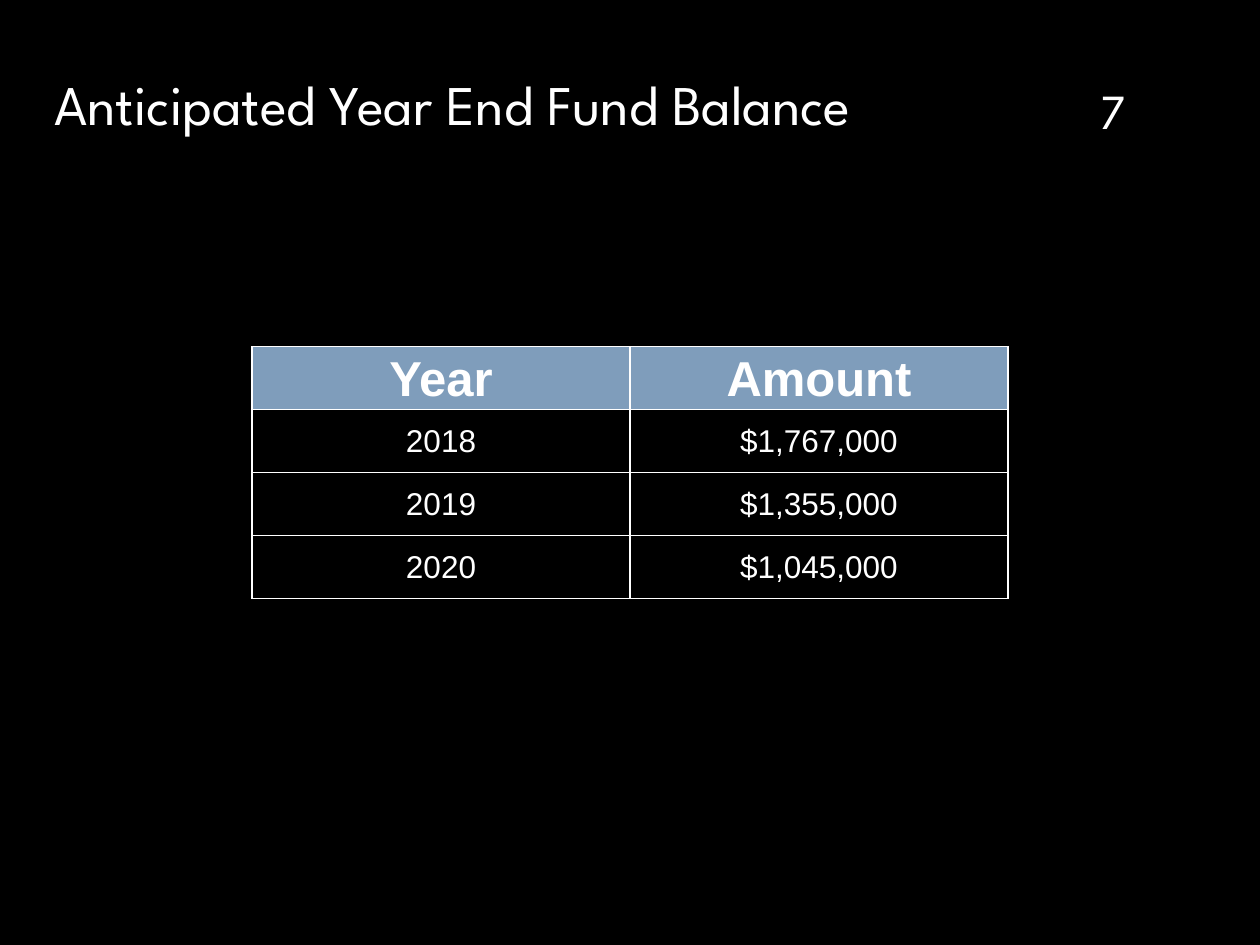
from dataclasses import dataclass

from lxml.etree import SubElement
from pptx import Presentation
from pptx.dml.color import RGBColor
from pptx.enum.text import MSO_ANCHOR, MSO_AUTO_SIZE, PP_ALIGN
from pptx.oxml.ns import qn
from pptx.util import Cm, Pt

TITLE = "Anticipated Year End Fund Balance"
PAGE_NUMBER = "7"
BALANCES = [
    ("Year", "Amount"),
    ("2018", "$1,767,000"),
    ("2019", "$1,355,000"),
    ("2020", "$1,045,000"),
]


@dataclass(frozen=True)
class Theme:
    background: str = "000000"
    text: str = "FFFFFF"
    header: str = "7F9DBB"
    heading_font: str = "League Spartan"
    table_font: str = "Arial"
    title_size: int = 32
    number_size: int = 28
    header_size: int = 28
    body_size: int = 18
    border_width: int = 1


THEME = Theme()
SLIDE_WIDTH, SLIDE_HEIGHT = Cm(25.4), Cm(19.05)
COLUMN_WIDTH, ROW_HEIGHT = Cm(7.62), Cm(1.27)
TABLE_TOP = Cm(6.99)
CELL_INSET = Cm(0.03)


def write_text(text_frame, text, font_name, size, alignment, bold=False):
    paragraph = text_frame.paragraphs[0]
    paragraph.alignment = alignment
    run = paragraph.add_run()
    run.text = text
    run.font.name = font_name
    run.font.size = Pt(size)
    run.font.bold = bold
    run.font.color.rgb = RGBColor.from_string(THEME.text)


def place(shape, left, top, width, height):
    shape.left, shape.top, shape.width, shape.height = left, top, width, height


def add_borders(cell):
    properties = cell._tc.get_or_add_tcPr()
    for position, side in enumerate(("lnL", "lnR", "lnT", "lnB")):
        line = SubElement(properties, qn(f"a:{side}"), w=str(Pt(THEME.border_width)))
        fill = SubElement(line, qn("a:solidFill"))
        SubElement(fill, qn("a:srgbClr"), val=THEME.text)
        properties.insert(position, line)


def add_title(slide):
    title = slide.shapes.title
    place(title, Cm(0.84), Cm(1.27), Cm(21.51), Cm(3.89))
    text_frame = title.text_frame
    text_frame.word_wrap = True
    text_frame.auto_size = MSO_AUTO_SIZE.NONE
    text_frame.vertical_anchor = MSO_ANCHOR.TOP
    write_text(text_frame, TITLE, THEME.heading_font, THEME.title_size, PP_ALIGN.LEFT)


def add_page_number(slide):
    number = slide.shapes.add_textbox(Cm(21.56), Cm(0.81), Cm(1.75), Cm(2.13))
    text_frame = number.text_frame
    text_frame.word_wrap = True
    text_frame.vertical_anchor = MSO_ANCHOR.BOTTOM
    write_text(text_frame, PAGE_NUMBER, THEME.heading_font, THEME.number_size, PP_ALIGN.CENTER)


def add_balance_table(slide):
    row_count, column_count = len(BALANCES), len(BALANCES[0])
    width = COLUMN_WIDTH * column_count
    left = (SLIDE_WIDTH - width) // 2
    table = slide.shapes.add_table(
        row_count, column_count, left, TABLE_TOP, width, ROW_HEIGHT * row_count
    ).table
    table.first_row = False
    table.horz_banding = False
    for row_index, values in enumerate(BALANCES):
        is_header = row_index == 0
        size = THEME.header_size if is_header else THEME.body_size
        fill_color = THEME.header if is_header else THEME.background
        for column_index, value in enumerate(values):
            cell = table.cell(row_index, column_index)
            cell.vertical_anchor = MSO_ANCHOR.MIDDLE
            cell.margin_left = cell.margin_right = cell.margin_top = CELL_INSET
            cell.margin_bottom = 0
            cell.fill.solid()
            cell.fill.fore_color.rgb = RGBColor.from_string(fill_color)
            add_borders(cell)
            write_text(
                cell.text_frame, value, THEME.table_font, size, PP_ALIGN.CENTER, is_header
            )


def main():
    presentation = Presentation()
    presentation.slide_width, presentation.slide_height = SLIDE_WIDTH, SLIDE_HEIGHT
    slide = presentation.slides.add_slide(presentation.slide_layouts.get_by_name("Title Only"))
    slide.background.fill.solid()
    slide.background.fill.fore_color.rgb = RGBColor.from_string(THEME.background)
    add_title(slide)
    add_page_number(slide)
    add_balance_table(slide)
    presentation.save("out.pptx")


if __name__ == "__main__":
    main()
